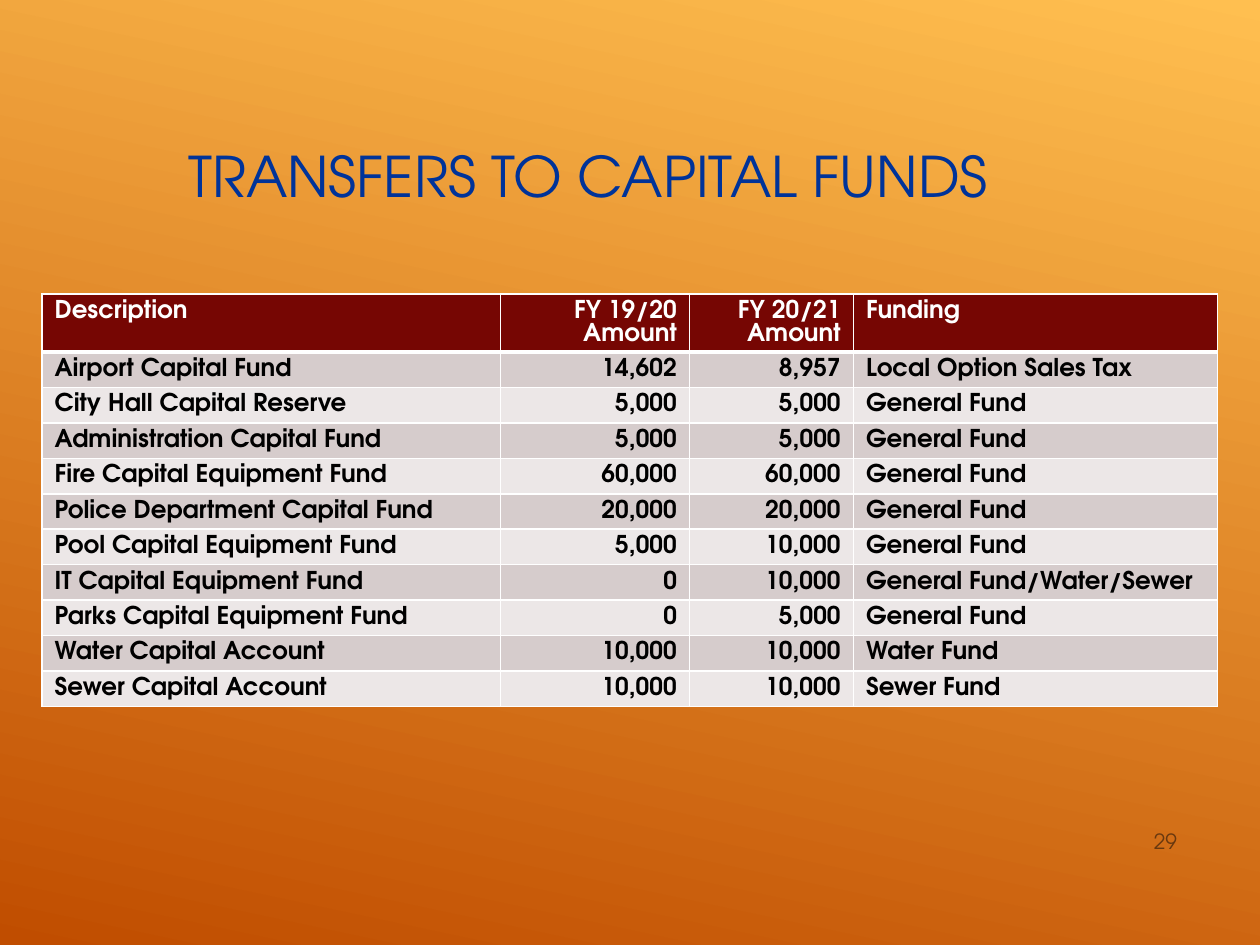
from dataclasses import dataclass
from lxml.etree import SubElement as Sub
from pptx import Presentation
from pptx.dml.color import RGBColor
from pptx.enum.text import MSO_ANCHOR as Anchor, PP_ALIGN as Align
from pptx.oxml.ns import qn
from pptx.util import Inches, Pt

FONT = "TeX Gyre Adventor"
GOLD = RGBColor(0xFF, 0xBF, 0x50)
RUST = RGBColor(0xC0, 0x4D, 0x00)
BLUE = RGBColor(0x00, 0x33, 0x99)
BROWN = RGBColor(0x68, 0x38, 0x0F)
MAROON = RGBColor(0x76, 0x06, 0x03)
ROSE = RGBColor(0xD6, 0xCC, 0xCC)
PALE = RGBColor(0xEC, 0xE7, 0xE7)
WHITE = RGBColor(0xFF, 0xFF, 0xFF)
BLACK = RGBColor(0x00, 0x00, 0x00)

WIDE, HIGH = Inches(10), Inches(7.5)
ROW, HEAD = Inches(0.28), Inches(0.46)
COLS = (0.364, 0.15, 0.13, 0.289)
SIDES = (Align.LEFT, Align.RIGHT, Align.RIGHT, Align.LEFT)
DATA = (
    ("Description", "FY 19/20 Amount", "FY 20/21 Amount", "Funding"),
    ("Airport Capital Fund", "14,602", "8,957", "Local Option Sales Tax"),
    ("City Hall Capital Reserve", "5,000", "5,000", "General Fund"),
    ("Administration Capital Fund", "5,000", "5,000", "General Fund"),
    ("Fire Capital Equipment Fund", "60,000", "60,000", "General Fund"),
    ("Police Department Capital Fund", "20,000", "20,000", "General Fund"),
    ("Pool Capital Equipment Fund", "5,000", "10,000", "General Fund"),
    ("IT Capital Equipment Fund", "0", "10,000", "General Fund/Water/Sewer"),
    ("Parks Capital Equipment Fund", "0", "5,000", "General Fund"),
    ("Water Capital Account", "10,000", "10,000", "Water Fund"),
    ("Sewer Capital Account", "10,000", "10,000", "Sewer Fund"),
)


@dataclass(frozen=True)
class Label:
    text: str
    left: float
    top: float
    width: float
    height: float
    size: int
    color: RGBColor
    side: Align
    anchor: Anchor


LABELS = (
    Label("TRANSFERS TO CAPITAL FUNDS", 0.067, 0.09, 0.8, 0.19, 32, BLUE,
          Align.CENTER, Anchor.MIDDLE),
    Label("29", 0.85, 0.813, 0.094, 0.097, 12, BROWN,
          Align.RIGHT, Anchor.BOTTOM),
)


def style(para, size: int, color: RGBColor, side: Align, bold: bool = False) -> None:
    para.alignment = side
    font = para.font
    font.name, font.size, font.bold = FONT, Pt(size), bold
    font.color.rgb = color


def write(slide, label: Label) -> None:
    box = slide.shapes.add_textbox(
        int(WIDE * label.left), int(HIGH * label.top),
        int(WIDE * label.width), int(HIGH * label.height))
    frame = box.text_frame
    frame.word_wrap = True
    frame.vertical_anchor = label.anchor
    frame.text = label.text
    style(frame.paragraphs[0], label.size, label.color, label.side)


def edge(cell, top: int, base: int) -> None:
    props = cell._tc.get_or_add_tcPr()
    for spot, (tag, width) in enumerate(
            (("lnL", 1), ("lnR", 1), ("lnT", top), ("lnB", base))):
        line = Sub(props, qn(f"a:{tag}"), w=str(Pt(width)))
        fill = Sub(line, qn("a:solidFill"))
        Sub(fill, qn("a:srgbClr"), val=str(WHITE))
        props.insert(spot, line)


def fill_cell(cell, text: str, row: int, side: Align) -> None:
    cell.text = text
    para = cell.text_frame.paragraphs[0]
    style(para, 14, BLACK if row else WHITE, side, True)
    para.line_spacing = Pt(13)
    cell.fill.solid()
    cell.fill.fore_color.rgb = (ROSE if row % 2 else PALE) if row else MAROON
    edge(cell, 3 if row == 1 else 1, 1 if row else 3)


def draw_grid(slide) -> None:
    count = len(DATA)
    grid = slide.shapes.add_table(
        count, len(COLS), int(WIDE / 30), int(HIGH * 0.311),
        int(WIDE * sum(COLS)), HEAD + ROW * (count - 1)).table
    for col, share in zip(grid.columns, COLS):
        col.width = int(WIDE * share)
    for row, texts in enumerate(DATA):
        grid.rows[row].height = ROW if row else HEAD
        for col, (text, side) in enumerate(zip(texts, SIDES)):
            fill_cell(grid.cell(row, col), text, row, side)


def paint(slide) -> None:
    fill = slide.background.fill
    fill.gradient()
    fill.gradient_angle = 258
    for stop, color, place in zip(fill.gradient_stops, (GOLD, RUST), (0, 1)):
        stop.color.rgb = color
        stop.position = place


def main() -> None:
    deck = Presentation()
    deck.slide_width, deck.slide_height = WIDE, HIGH
    slide = deck.slides.add_slide(deck.slide_layouts[6])
    paint(slide)
    for label in LABELS:
        write(slide, label)
    draw_grid(slide)
    deck.save("out.pptx")


if __name__ == "__main__":
    main()
